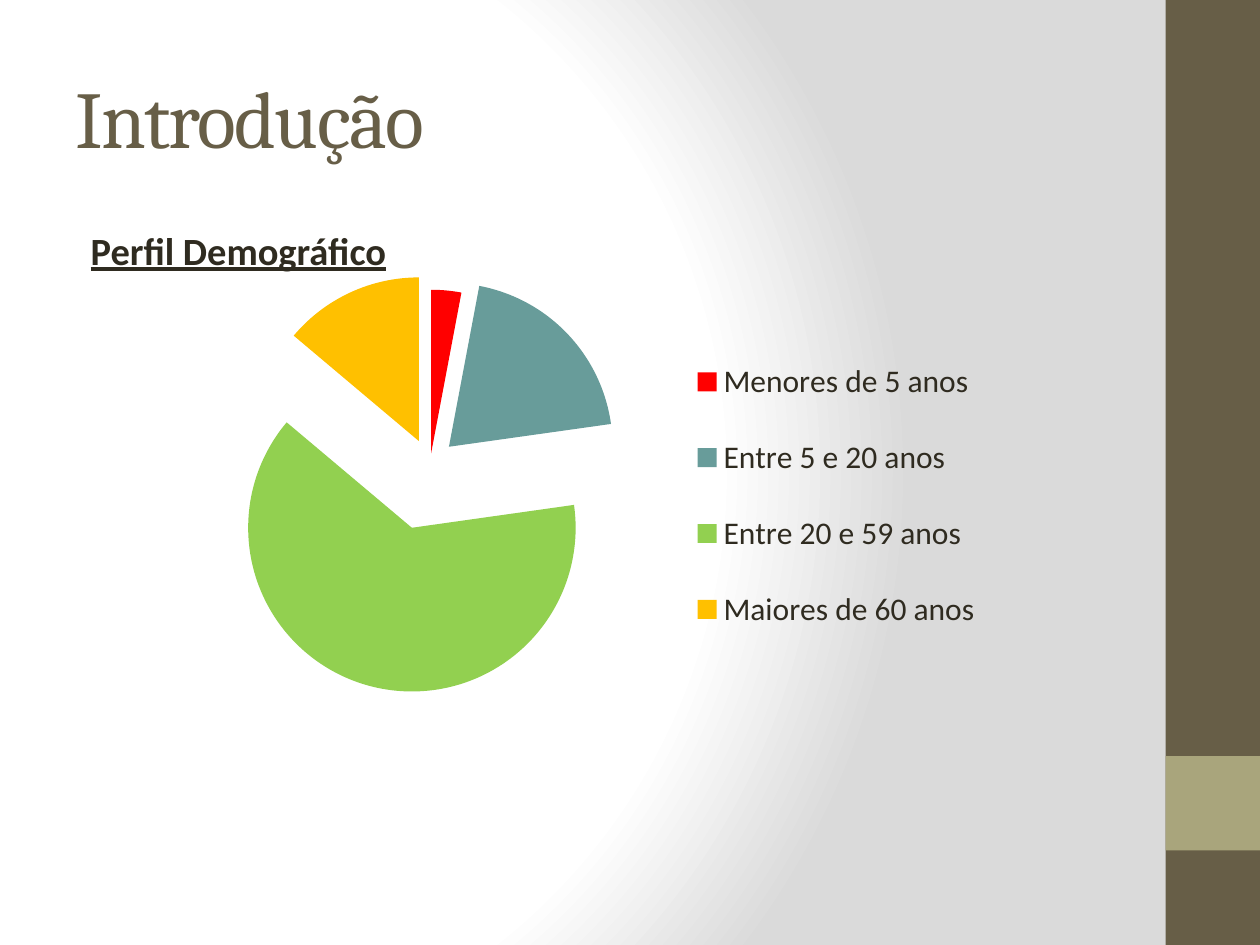
"""Build the demographic profile slide with its exploded age pie."""
import pptx
import pptx.chart.data
import pptx.dml.color
import pptx.enum.chart
import pptx.enum.shapes
import pptx.enum.text
import pptx.oxml
import pptx.oxml.ns
import pptx.util

THEME = {
    "olive": "675E47", "sage": "A9A57C", "ink": "2F2B20",
    "white": "FFFFFF", "mist": "DADADA",
    "red": "FF0000", "teal": "689C9A", "green": "92D050", "amber": "FFC000",
    "heading_font": "Cambria", "text_font": "Calibri",
    "title_size": pptx.util.Pt(46),
    "body_size": pptx.util.Pt(22),
    "legend_size": pptx.util.Pt(18),
}
COLUMNS, ROWS = 40, 30
CELL = pptx.util.Inches(0.25)
SIDES = ("left", "top", "width", "height")

BACKDROP_STOPS = {0: "white", 75: "white", 100: "mist"}
BANDS = [
    ("olive", 0, ROWS),
    ("sage", 24, 3),
]
AGE_GROUPS = [
    ("Menores de 5 anos", 3, "red", 7),
    ("Entre 5 e 20 anos", 20, "teal", 16),
    ("Entre 20 e 59 anos", 64, "green", 40),
    ("Maiores de 60 anos", 14, "amber", 16),
]
SERIES_EXPLOSION = 52
LEGEND_LAYOUT = {"xMode": "edge", "yMode": "edge", "x": 0.62, "y": 0.25, "w": 0.36, "h": 0.61}

NS = pptx.oxml.ns.nsdecls("a", "c")
qn = pptx.oxml.ns.qn
rgb = pptx.dml.color.RGBColor.from_string


def grid(*cells):
    return [round(cell * CELL) for cell in cells]


def style(target, values):
    for name, value in values.items():
        setattr(target, name, value)


deck = pptx.Presentation()
style(deck, {"slide_width": COLUMNS * CELL, "slide_height": ROWS * CELL})
slide = deck.slides.add_slide(deck.slide_layouts[1])
heading, profile = slide.placeholders

slide.background.fill.gradient()
backdrop = slide.element.find(".//" + qn("a:gradFill"))
stops = "".join(
    f'<a:gs pos="{percent * 1000}"><a:srgbClr val="{THEME[tone]}"/></a:gs>'
    for percent, tone in BACKDROP_STOPS.items()
)
backdrop.getparent().replace(backdrop, pptx.oxml.parse_xml(
    f'<a:gradFill {NS} rotWithShape="1"><a:gsLst>{stops}</a:gsLst><a:path path="circle">'
    '<a:fillToRect l="20000" t="50000" r="100000" b="50000"/></a:path></a:gradFill>'
))

for tone, top_row, row_count in BANDS:
    band = slide.shapes.add_shape(
        pptx.enum.shapes.MSO_SHAPE.RECTANGLE, *grid(37, top_row, 3, row_count)
    )
    band.shadow.inherit = False
    band.fill.solid()
    band.fill.fore_color.rgb = rgb(THEME[tone])
    band.line.fill.background()
    heading.element.addprevious(band.element)

ages = pptx.chart.data.CategoryChartData()
ages.categories = [label for label, *_ in AGE_GROUPS]
ages.add_series("Series 1", [share for _, share, *_ in AGE_GROUPS])
age_frame = slide.shapes.add_chart(
    pptx.enum.chart.XL_CHART_TYPE.PIE, *grid(5.2, 5.88, 26.68, 17.76), ages
)
heading.element.addprevious(age_frame.element)
age_pie = age_frame.chart
style(age_pie, {"has_title": False, "has_legend": True})
style(age_pie.font, {"name": THEME["text_font"], "size": THEME["legend_size"]})
age_pie.font.color.rgb = rgb(THEME["ink"])
style(age_pie.legend, {
    "position": pptx.enum.chart.XL_LEGEND_POSITION.RIGHT,
    "include_in_layout": False,
})
legend_rules = "".join(f'<c:{tag} val="{value}"/>' for tag, value in LEGEND_LAYOUT.items())
age_pie.legend._element.get_or_add_layout().append(
    pptx.oxml.parse_xml(f"<c:manualLayout {NS}>{legend_rules}</c:manualLayout>")
)

age_pie.plots[0].vary_by_categories = True
slices = age_pie.plots[0].series[0]
for index, (_, _, tone, _) in enumerate(AGE_GROUPS):
    slice_fill = slices.points[index].format.fill
    slice_fill.solid()
    slice_fill.fore_color.rgb = rgb(THEME[tone])

slice_points = slices._element.findall(qn("c:dPt"))
explosions = [(slice_points[0], SERIES_EXPLOSION)] + [
    (point.find(qn("c:spPr")), offset)
    for point, (*_, offset) in zip(slice_points, AGE_GROUPS)
]
for follower, offset in explosions:
    follower.addprevious(pptx.oxml.parse_xml(f'<c:explosion {NS} val="{offset}"/>'))

ANCHOR = pptx.enum.text.MSO_ANCHOR
for holder, wording, cells, anchor, tone, font in (
    (heading, "Introdução", (2, 1.2, 33.32, 5), ANCHOR.MIDDLE, "olive",
     {"name": THEME["heading_font"], "size": THEME["title_size"]}),
    (profile, "Perfil Demográfico", (2, 7, 26.2, 13.68), ANCHOR.TOP, "ink",
     {"name": THEME["text_font"], "size": THEME["body_size"],
      "bold": True, "underline": True}),
):
    style(holder, dict(zip(SIDES, grid(*cells))))
    style(holder.text_frame, {"text": wording, "vertical_anchor": anchor, "word_wrap": True})
    line = holder.text_frame.paragraphs[0]
    line.alignment = pptx.enum.text.PP_ALIGN.LEFT
    style(line.runs[0].font, font)
    line.runs[0].font.color.rgb = rgb(THEME[tone])

heading.text_frame.paragraphs[0].runs[0].font._element.set("spc", "-100")
profile_format = profile.text_frame.paragraphs[0]._p.get_or_add_pPr()
for name, length in {"marL": 0.12, "indent": 0}.items():
    profile_format.set(name, str(pptx.util.Inches(length)))
profile_format.append(pptx.oxml.parse_xml(f"<a:buNone {NS}/>"))

deck.save("out.pptx")
